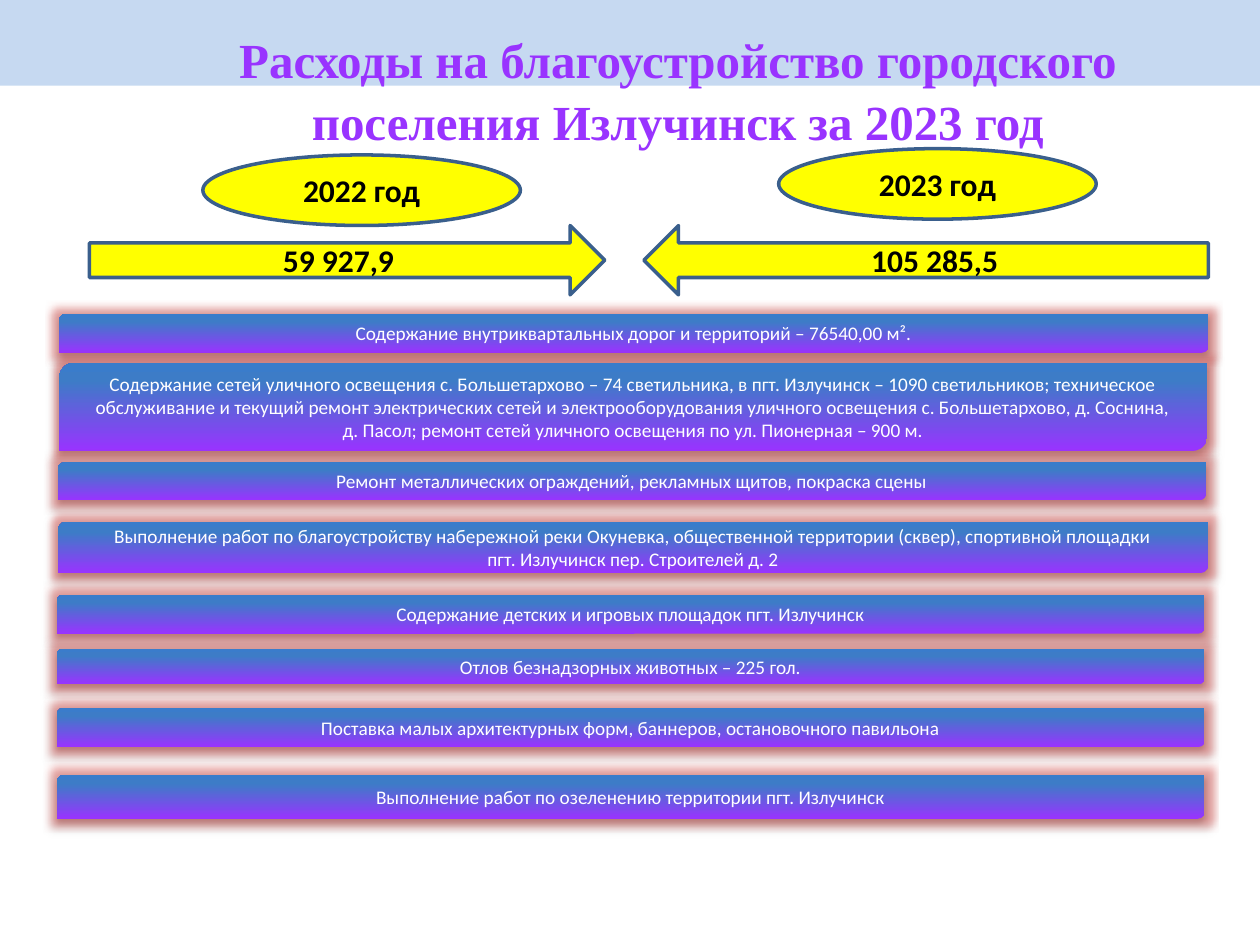
from pptx import Presentation
from pptx.util import Inches, Pt
from pptx.dml.color import RGBColor as RGB
from pptx.enum.shapes import MSO_SHAPE as Geo
from pptx.enum.text import PP_ALIGN as Align, MSO_ANCHOR as Anchor
from pptx.oxml import parse_xml as parse
from pptx.oxml.ns import qn, nsdecls

HUES = {
    "band": "C6D9F1", "title": "9933FF", "mark": "FFFF00", "edge": "3A5F8C",
    "ink": "000000", "text": "FFFFFF", "glow": "D93A36",
    "low": "9933FF", "mid": "3D7CC7", "top": "3A7CCB",
}
TITLE = {"name": "Times New Roman", "size": Pt(28), "bold": True}
LABEL = {"name": "Calibri", "size": Pt(18), "bold": True}
BODY = {"name": "Calibri", "size": Pt(11), "bold": False}

YEARS = [
    ("2022 год", (1.61, 1.23, 2.52, 0.56),
     "59 927,9", (0.71, 1.79, 4.09, 0.55), Geo.RIGHT_ARROW),
    ("2023 год", (6.18, 1.18, 2.52, 0.56),
     "105 285,5", (5.11, 1.79, 4.48, 0.55), Geo.LEFT_ARROW),
]
WORKS = [
    ((0.47, 2.49, 9.12, 0.31),
     "Содержание внутриквартальных дорог и территорий – 76540,00 м²."),
    ((0.47, 2.88, 9.11, 0.70),
     "Содержание сетей уличного освещения с. Большетархово – 74 светильника, "
     "в пгт. Излучинск – 1090 светильников; техническое обслуживание и текущий "
     "ремонт электрических сетей и электрооборудования уличного освещения "
     "с. Большетархово, д. Соснина,\vд. Пасол; ремонт сетей уличного освещения "
     "по ул. Пионерная – 900 м."),
    ((0.46, 3.67, 9.11, 0.30),
     "Ремонт металлических ограждений, рекламных щитов, покраска сцены"),
    ((0.46, 4.14, 9.13, 0.41),
     "Выполнение работ по благоустройству набережной реки Окуневка, "
     "общественной территории (сквер), спортивной площадки\v"
     "пгт. Излучинск пер. Строителей д. 2"),
    ((0.45, 4.72, 9.11, 0.31),
     "Содержание детских и игровых площадок пгт. Излучинск"),
    ((0.45, 5.15, 9.11, 0.28), "Отлов безнадзорных животных – 225 гол."),
    ((0.45, 5.62, 9.11, 0.31),
     "Поставка малых архитектурных форм, баннеров, остановочного павильона"),
    ((0.45, 6.15, 9.11, 0.35),
     "Выполнение работ по озеленению территории пгт. Излучинск"),
]


def color(key):
    return RGB.from_string(HUES[key])


def write(shape, text, font, hue, anchor=Anchor.MIDDLE):
    frame = shape.text_frame
    frame.word_wrap = True
    frame.vertical_anchor = anchor
    frame.text = text
    para = frame.paragraphs[0]
    para.alignment = Align.CENTER
    for run in para.runs:
        for key, value in font.items():
            setattr(run.font, key, value)
        run.font.color.rgb = color(hue)
    return frame


def plain(slide, geo, box, hue, edge=None):
    shape = slide.shapes.add_shape(geo, *map(Inches, box))
    shape.shadow.inherit = False
    shape.fill.solid()
    shape.fill.fore_color.rgb = color(hue)
    if edge:
        shape.line.color.rgb = color(edge)
        shape.line.width = Pt(2)
    else:
        shape.line.fill.background()
    return shape


def header(slide, box):
    plain(slide, Geo.RECTANGLE, (0, 0, 10, 0.68), "band")
    head = slide.shapes.add_textbox(*map(Inches, box))
    frame = write(head, "Расходы на благоустройство городского поселения "
                  "Излучинск за 2023 год", TITLE, "title", Anchor.TOP)
    frame.margin_left = frame.margin_right = Inches(0.3)
    frame.margin_top = Inches(0.07)
    frame.paragraphs[0].line_spacing = 1.05


def mark(slide, geo, box, text):
    write(plain(slide, geo, box, "mark", "edge"), text, LABEL, "ink")


def bar(slide, box, text):
    shape = plain(slide, Geo.ROUND_2_DIAG_RECTANGLE, box, "low")
    shape.fill.gradient()
    shape.fill.gradient_angle = 90
    props = shape._element.spPr
    stops = props.find(qn("a:gradFill")).find(qn("a:gsLst"))
    for stop in list(stops):
        stops.remove(stop)
    for pos, hue in ((0, "low"), (80, "mid"), (100, "top")):
        stops.append(parse(
            f'<a:gs {nsdecls("a")} pos="{pos * 1000}">'
            f'<a:srgbClr val="{HUES[hue]}"/></a:gs>'))
    glow = f'rad="{Pt(8)}"'
    shade = f'blurRad="{Pt(3.1)}" dist="{Pt(1.8)}" dir="5400000" rotWithShape="0"'
    effects = props.find(qn("a:effectLst"))
    for tag, attrs, hue, alpha in (("glow", glow, "glow", 40),
                                   ("outerShdw", shade, "ink", 35)):
        effects.append(parse(
            f'<a:{tag} {nsdecls("a")} {attrs}><a:srgbClr val="{HUES[hue]}">'
            f'<a:alpha val="{alpha * 1000}"/></a:srgbClr></a:{tag}>'))
    write(shape, text, BODY, "text")


def main():
    deck = Presentation()
    deck.slide_width, deck.slide_height = Inches(10), Inches(7.5)
    slide = deck.slides.add_slide(deck.slide_layouts[6])
    header(slide, (0.88, 0.14, 9, 1.25))
    for year, oval, total, arrow, geo in YEARS:
        mark(slide, geo, arrow, total)
        mark(slide, Geo.OVAL, oval, year)
    for box, text in WORKS:
        bar(slide, box, text)
    deck.save("out.pptx")


if __name__ == "__main__":
    main()
